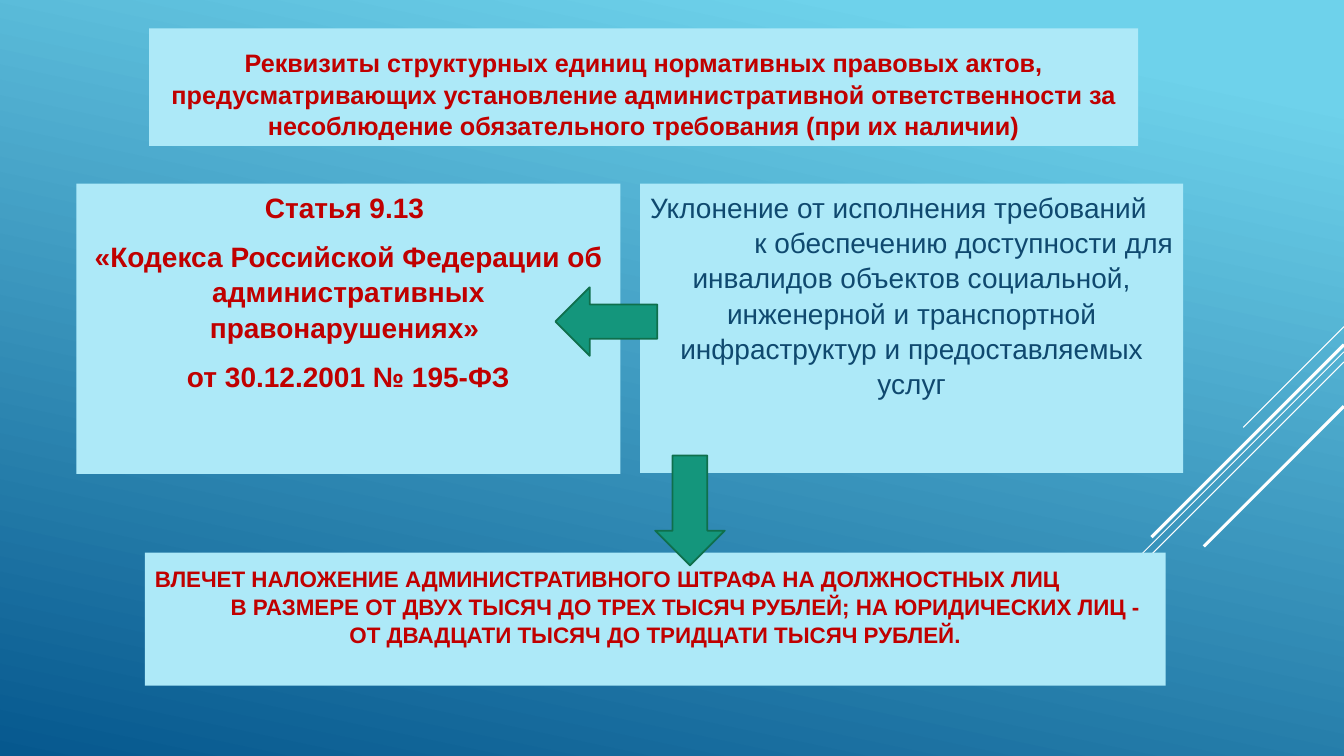
from lxml import etree
from pptx import Presentation, util as u
from pptx.dml.color import RGBColor
from pptx.enum import shapes, text
from pptx.oxml import ns

Pt = u.Pt
COLORS = {"sky": "6ED2EB", "deep": "06588E", "panel": "ADE9F8", "red": "C00000",
          "navy": "0F496F", "green": "14967C", "green_edge": "0F6F4C", "white": "FFFFFF"}
LEFT, CENTER, RIGHT = text.PP_ALIGN.LEFT, text.PP_ALIGN.CENTER, text.PP_ALIGN.RIGHT
TOP, MIDDLE, BOTTOM = text.MSO_ANCHOR.TOP, text.MSO_ANCHOR.MIDDLE, text.MSO_ANCHOR.BOTTOM


def rgb(name):
    return RGBColor.from_string(COLORS[name])


presentation = Presentation()
presentation.slide_width, presentation.slide_height = Pt(960), Pt(540)
slide = presentation.slides.add_slide(presentation.slide_layouts.get_by_name("Comparison"))

# Background
background = slide.background.fill
background.gradient()
background.gradient_angle = 258
for stop, (position, color) in zip(background.gradient_stops, [(0.1, "sky"), (1, "deep")]):
    stop.position = position
    stop.color.rgb = rgb(color)

# Diagonal lines at 45 degrees: start height on the right edge, run, width
for top, run, width in [(233.3, 72, 0.75), (251.3, 234.7, 0.75), (258.5, 149.3, 0.75),
                        (246.2, 137.5, 2.25), (290.2, 100.1, 2.25)]:
    line = slide.shapes.add_connector(shapes.MSO_CONNECTOR.STRAIGHT, Pt(960), Pt(top),
                                      Pt(960 - run), Pt(top + run))
    line.line.color.rgb = rgb("white")
    line.line.width = Pt(width)
    etree.SubElement(line._element.spPr, ns.qn("a:effectLst"))

# Panels: placeholder index, box, anchor, bottom inset, font, spacing,
# paragraphs as (wording, alignment, left margin)
panels = [
    (0, (103.5, 394.8, 729.2, 95), MIDDLE, 23, (16, True, "red"), (0, 0), [
        ("ВЛЕЧЕТ НАЛОЖЕНИЕ АДМИНИСТРАТИВНОГО ШТРАФА НА ДОЛЖНОСТНЫХ ЛИЦ", LEFT, 0),
        ("В РАЗМЕРЕ ОТ ДВУХ ТЫСЯЧ ДО ТРЕХ ТЫСЯЧ РУБЛЕЙ; НА ЮРИДИЧЕСКИХ ЛИЦ -", CENTER, 43),
        ("ОТ ДВАДЦАТИ ТЫСЯЧ ДО ТРИДЦАТИ ТЫСЯЧ РУБЛЕЙ.", CENTER, 0)]),
    (1, (106.5, 20.3, 706.5, 84), BOTTOM, 3.6, (18, True, "red"), (0, 0), [
        ("Реквизиты структурных единиц нормативных правовых актов, предусматривающих "
         "установление административной ответственности за несоблюдение обязательного "
         "требования (при их наличии)", CENTER, 0)]),
    (2, (54.6, 131.2, 388.6, 207.4), TOP, 3.6, (20, True, "red"), (4, 6), [
        ("Статья 9.13 ", CENTER, 0),
        ("«Кодекса Российской Федерации об административных правонарушениях» ", CENTER, 0),
        ("от 30.12.2001 № 195-ФЗ", CENTER, 0)]),
    (4, (457.2, 131.2, 388, 206.6), TOP, 3.6, (20, False, "navy"), (0, 0), [
        ("Уклонение от исполнения требований", LEFT, 0),
        ("к обеспечению доступности для", RIGHT, 0),
        ("инвалидов объектов социальной, инженерной и транспортной инфраструктур "
         "и предоставляемых услуг", CENTER, 0)]),
]
placeholders = {shape.placeholder_format.idx: shape for shape in slide.placeholders}
unused = placeholders[3]._element
unused.getparent().remove(unused)

for index, box, anchor, inset, (size, bold, color), (before, after), paragraphs in panels:
    panel = placeholders[index]
    slide.shapes._spTree.append(panel._element)  # bring in front of the lines
    for name, value in zip(("left", "top", "width", "height"), box):
        setattr(panel, name, Pt(value))
    panel.fill.solid()
    panel.fill.fore_color.rgb = rgb("panel")
    frame = panel.text_frame
    frame_format = {"word_wrap": True, "auto_size": text.MSO_AUTO_SIZE.NONE,
                    "vertical_anchor": anchor, "margin_left": Pt(7.2), "margin_right": Pt(7.2),
                    "margin_top": Pt(3.6), "margin_bottom": Pt(inset)}
    for name, value in frame_format.items():
        setattr(frame, name, value)
    for number, (wording, alignment, margin) in enumerate(paragraphs):
        paragraph = frame.add_paragraph() if number else frame.paragraphs[0]
        paragraph_format = {"alignment": alignment, "line_spacing": 1.05,
                            "space_before": Pt(before), "space_after": Pt(after)}
        for name, value in paragraph_format.items():
            setattr(paragraph, name, value)
        properties = paragraph._p.get_or_add_pPr()
        properties.set("marL", str(Pt(margin)))
        properties.set("indent", "0")
        etree.SubElement(properties, ns.qn("a:buNone"))
        run = paragraph.add_run()
        run.text = wording
        for name, value in {"name": "Arial", "size": Pt(size), "bold": bold}.items():
            setattr(run.font, name, value)
        run.font.color.rgb = rgb(color)

# Arrows between the panels
for kind, box in [(shapes.MSO_SHAPE.LEFT_ARROW, (396.7, 205.2, 72.7, 49)),
                  (shapes.MSO_SHAPE.DOWN_ARROW, (468, 325.4, 49.7, 78.5))]:
    arrow = slide.shapes.add_shape(kind, *map(Pt, box))
    arrow.shadow.inherit = False
    arrow.fill.solid()
    arrow.fill.fore_color.rgb = rgb("green")
    arrow.line.color.rgb = rgb("green_edge")
    arrow.line.width = Pt(1.25)

presentation.save("out.pptx")
